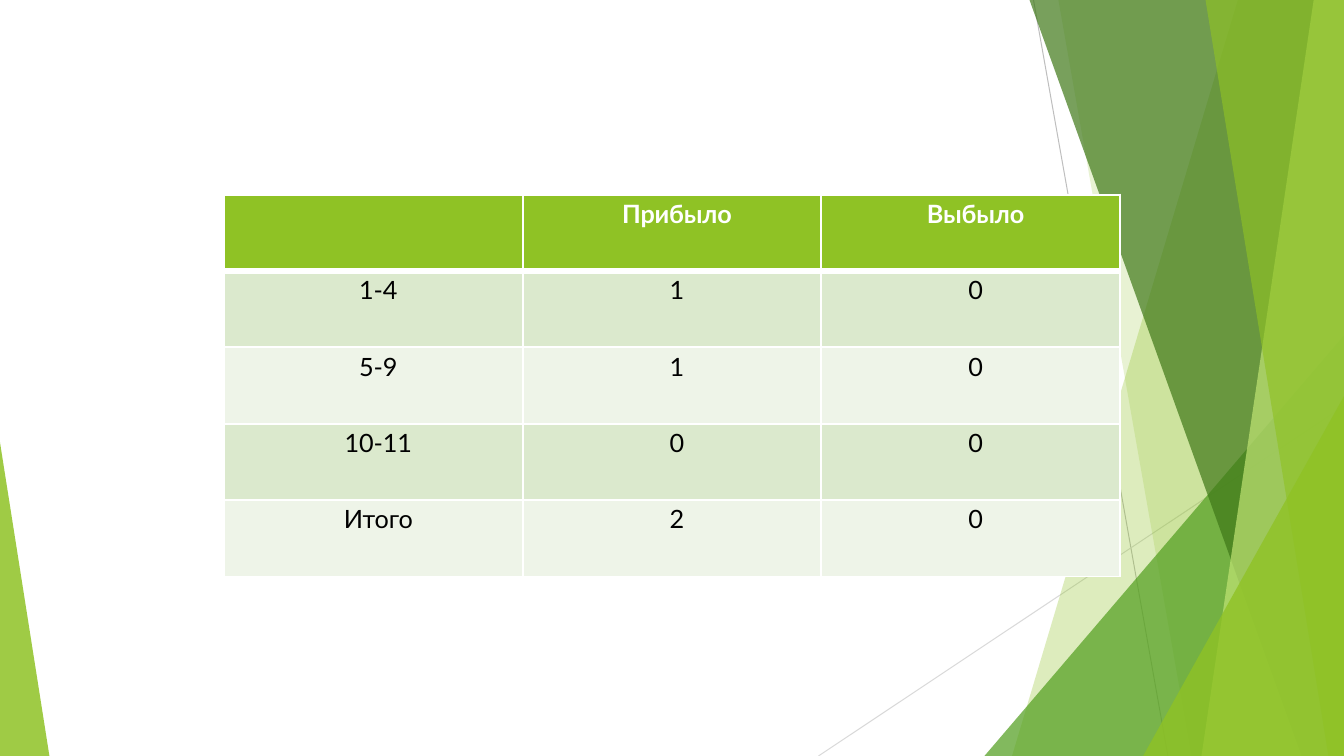
import pptx
import pptx.dml.color
import pptx.enum.shapes
import pptx.enum.text
import pptx.oxml.ns
import pptx.util
import lxml.etree

COLORS = {
    "white": "FFFFFF", "black": "000000", "lime": "8FC225", "leaf": "539F20",
    "forest": "3F7818", "pale lime": "C0E474", "band dark": "DBE9CD",
    "band light": "EEF4E8", "silver": "BEBEBE", "mist": "D9D9D9",
}

presentation = pptx.Presentation()
presentation.slide_width = pptx.util.Inches(13.3333)
presentation.slide_height = pptx.util.Inches(7.5)
slide = presentation.slides.add_slide(presentation.slide_layouts[6])


def rgb(name):
    return pptx.dml.color.RGBColor.from_string(COLORS[name])


def place(across, down):
    return (round(presentation.slide_width * across / 100),
            round(presentation.slide_height * down / 100))


rays = [
    ((76.9, 0), (86.9, 100), "silver"),
    ((100, 53.7), (60.9, 100), "mist"),
]
for start, end, color in rays:
    ray = slide.shapes.add_connector(
        pptx.enum.shapes.MSO_CONNECTOR.STRAIGHT, *place(*start), *place(*end))
    ray.line.color.rgb = rgb(color)
    ray.line.width = pptx.util.Pt(0.72)
    lxml.etree.SubElement(ray._element.spPr, pptx.oxml.ns.qn("a:effectLst"))

corner = (100, 100)
facets = [
    ([(100, 0), (92.1, 0), (75.3, 100), corner], "lime", 30),
    ([(100, 0), (78.75, 0), (88.65, 100), corner], "lime", 20),
    ([(100, 44.4), (73.25, 100), corner], "leaf", 72),
    ([(100, 0), (76.6, 0), (96.85, 100), corner], "forest", 70),
    ([(100, 0), (97.75, 0), (89.4, 100), corner], "pale lime", 70),
    ([(100, 0), (89.7, 0), (98.85, 100), corner], "lime", 65),
    ([(100, 52.4), (85.05, 100), corner], "lime", 80),
    ([(0, 58.5), (0, 100), (3.68, 100)], "lime", 85),
]
for corners, color, opacity in facets:
    points = [place(*point) for point in corners]
    outline = slide.shapes.build_freeform(*points[0])
    outline.add_line_segments(points[1:], close=True)
    facet = outline.convert_to_shape()
    facet.shadow.inherit = False
    facet.line.fill.background()
    facet.fill.solid()
    facet.fill.fore_color.rgb = rgb(color)
    tint = facet._element.spPr.find(".//" + pptx.oxml.ns.qn("a:srgbClr"))
    lxml.etree.SubElement(
        tint, pptx.oxml.ns.qn("a:alpha"), val=str(opacity * 1000))

movement = [
    ["", "Прибыло", "Выбыло"],
    ["1-4", "1", "0"],
    ["5-9", "1", "0"],
    ["10-11", "0", "0"],
    ["Итого", "2", "0"],
]
table = slide.shapes.add_table(
    len(movement), len(movement[0]),
    *place(100 / 6, 25.75), *place(200 / 3, 50.5)).table

for row, values in enumerate(movement):
    for column, value in enumerate(values):
        cell = table.cell(row, column)
        cell.margin_left = cell.margin_right = cell.margin_bottom = 0
        cell.margin_top = pptx.util.Inches(0.04)

        properties = cell._tc.get_or_add_tcPr()
        for side in "LRTB":
            under_header = (row, side) in [(0, "B"), (1, "T")]
            border = lxml.etree.SubElement(
                properties, pptx.oxml.ns.qn("a:ln" + side),
                w=str(pptx.util.Pt(4.25 if under_header else 1.5)))
            paint = lxml.etree.SubElement(border, pptx.oxml.ns.qn("a:solidFill"))
            lxml.etree.SubElement(
                paint, pptx.oxml.ns.qn("a:srgbClr"), val=COLORS["white"])

        band = "band dark" if row % 2 else "band light"
        cell.fill.solid()
        cell.fill.fore_color.rgb = rgb("lime" if row == 0 else band)

        paragraph = cell.text_frame.paragraphs[0]
        paragraph.text = value
        paragraph.alignment = pptx.enum.text.PP_ALIGN.CENTER
        paragraph.space_before = pptx.util.Pt(3.1)
        paragraph._p.get_or_add_pPr().set("marL", str(pptx.util.Inches(0.1)))
        for run in paragraph.runs:
            run.font.name = "Lato"
            run.font.size = pptx.util.Pt(18)
            run.font.bold = row == 0
            run.font.color.rgb = rgb("white" if row == 0 else "black")
            if row == 0 or column == 0:
                run.font._element.set("spc", "-10")

presentation.save("out.pptx")
